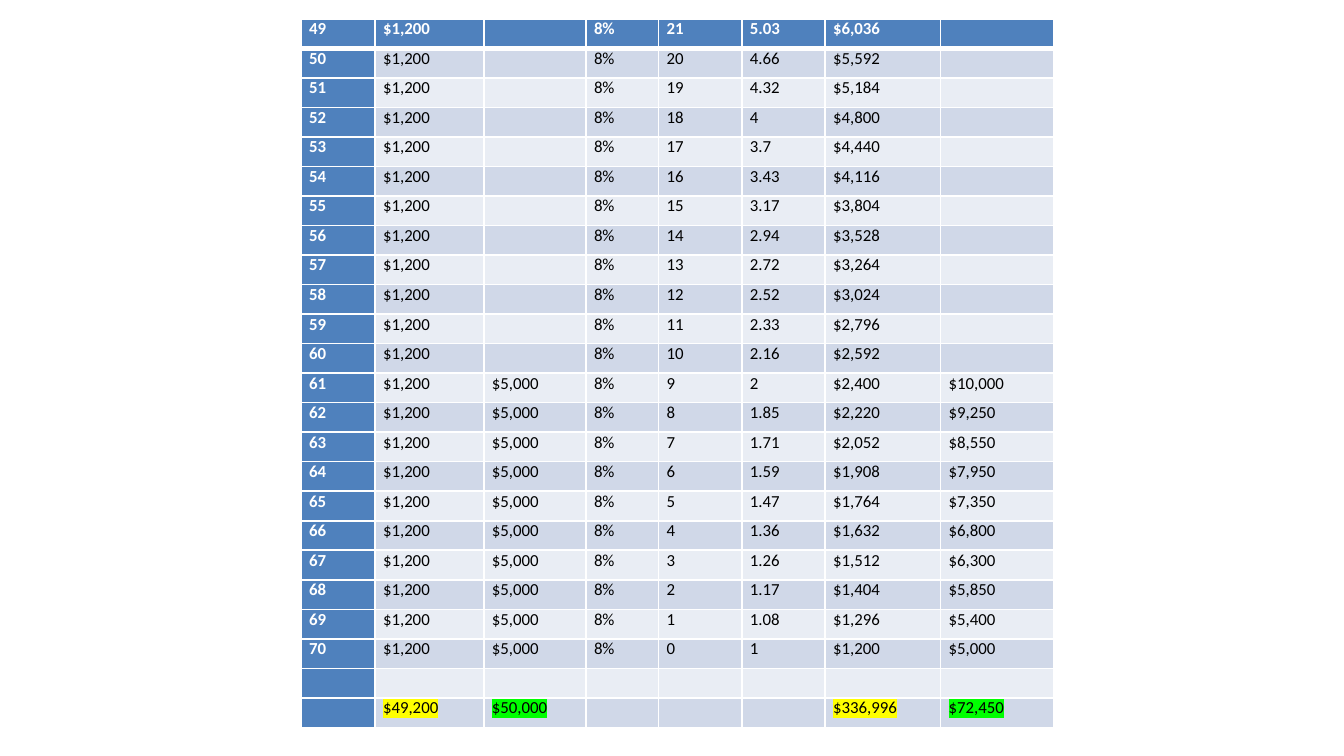
from lxml.etree import SubElement
from pptx import Presentation
from pptx.dml.color import RGBColor
from pptx.oxml.ns import qn
from pptx.util import Inches, Pt

SLIDE_WIDTH = 10
SLIDE_HEIGHT = SLIDE_WIDTH * 9 / 16
FONT, SIZE = "Calibri", 9
WHITE, BLACK, BLUE = "FFFFFF", "000000", "4F81BD"
BANDS = ("E9EDF4", "D0D8E8")
YELLOW, GREEN = "FFFF00", "00FF00"
COLUMN_WIDTHS = (0.55, 0.81, 0.76, 0.54, 0.62, 0.62, 0.86, 0.84)
ROW_HEIGHT = 0.22

FIRST_AGE, LAST_AGE, SECOND_START = 49, 70, 61
RATE = 0.08
FIRST_SAVING, SECOND_SAVING = 1200, 5000
TOTALS = ["", "$49,200", "$50,000", "", "", "", "$336,996", "$72,450"]
TOTAL_MARKS = {1: YELLOW, 2: GREEN, 6: YELLOW, 7: GREEN}


def color(value):
    return RGBColor.from_string(value)


def dollars(amount):
    return f"${amount:,.0f}"


def savings_row(age):
    """Yearly savings at this age and their value at the last age."""
    years = LAST_AGE - age
    factor = round((1 + RATE) ** years, 2)
    late = age >= SECOND_START
    return [
        str(age),
        dollars(FIRST_SAVING),
        dollars(SECOND_SAVING) if late else "",
        f"{RATE:.0%}",
        str(years),
        f"{factor:g}",
        dollars(FIRST_SAVING * factor),
        dollars(SECOND_SAVING * factor) if late else "",
    ]


def add_borders(cell, top=1, bottom=1):
    properties = cell._tc.get_or_add_tcPr()
    for side, width in (("L", 1), ("R", 1), ("T", top), ("B", bottom)):
        line = SubElement(properties, qn(f"a:ln{side}"), w=str(Pt(width)))
        fill = SubElement(line, qn("a:solidFill"))
        SubElement(fill, qn("a:srgbClr"), val=WHITE)


def write_text(cell, text, ink=BLACK, bold=False, mark=None):
    cell.margin_left = cell.margin_right = Inches(0.06)
    cell.margin_top = cell.margin_bottom = 0
    para = cell.text_frame.paragraphs[0]
    if not text:
        # Keeps the empty line as low as the written ones
        SubElement(para._p, qn("a:endParaRPr"), sz=str(SIZE * 100))
        return
    span = para.add_run()
    span.text = text
    span.font.name = FONT
    span.font.size = Pt(SIZE)
    span.font.bold = bold
    span.font.color.rgb = color(ink)
    if mark:
        properties = span._r.get_or_add_rPr()
        highlight = SubElement(properties, qn("a:highlight"))
        SubElement(highlight, qn("a:srgbClr"), val=mark)
        properties.find(qn("a:solidFill")).addnext(highlight)


def add_savings_table(page, rows):
    frame = page.shapes.add_table(
        len(rows), len(COLUMN_WIDTHS), Inches(2.24), Inches(0.14),
        Inches(sum(COLUMN_WIDTHS)), Inches(ROW_HEIGHT * len(rows)))
    table = frame.table
    table.first_col = True
    for column, width in zip(table.columns, COLUMN_WIDTHS):
        column.width = Inches(width)
    for row in table.rows:
        row.height = Inches(ROW_HEIGHT)

    last = len(rows) - 1
    for r, values in enumerate(rows):
        for c, text in enumerate(values):
            cell = table.cell(r, c)
            heading = r == 0 or c == 0
            # A thick line parts the first row from the rest
            add_borders(cell, top=3 if r == 1 else 1, bottom=3 if r == 0 else 1)
            cell.fill.solid()
            cell.fill.fore_color.rgb = color(BLUE if heading else BANDS[r % 2])
            write_text(cell, text, ink=WHITE if heading else BLACK, bold=heading,
                       mark=TOTAL_MARKS.get(c) if r == last else None)


def main():
    deck = Presentation()
    deck.slide_width, deck.slide_height = Inches(SLIDE_WIDTH), Inches(SLIDE_HEIGHT)
    page = deck.slides.add_slide(deck.slide_layouts[6])

    # One row per age, a gap row, then the totals
    rows = [savings_row(age) for age in range(FIRST_AGE, LAST_AGE + 1)]
    rows += [[""] * len(COLUMN_WIDTHS), TOTALS]
    add_savings_table(page, rows)

    deck.save("out.pptx")


if __name__ == "__main__":
    main()
